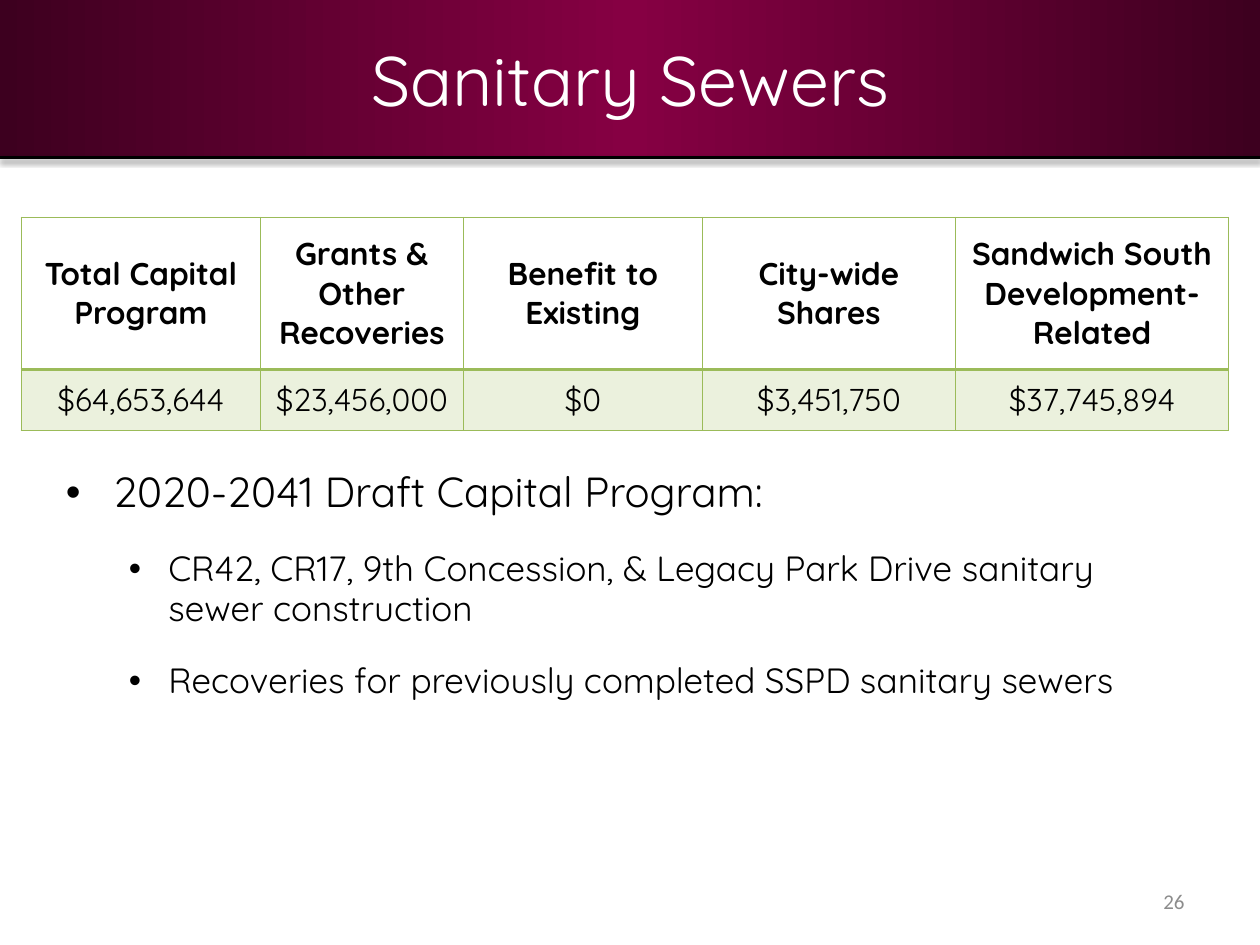
from lxml import etree
from pptx import Presentation
from pptx import util as u
from pptx.dml.color import RGBColor
from pptx.enum import shapes, text
from pptx.oxml import parse_xml
from pptx.oxml.ns import nsdecls, qn

Pt = u.Pt
COLORS = {"edge": "3D001F", "centre": "860043", "black": "000000",
          "white": "FFFFFF", "green": "9BBB59", "grey": "8C8C8C"}
CENTER, RIGHT, LEFT = (text.PP_ALIGN.CENTER, text.PP_ALIGN.RIGHT,
                       text.PP_ALIGN.LEFT)
MIDDLE = text.MSO_ANCHOR.MIDDLE
BANNER_HEIGHT = 90


def rgb(name):
    return RGBColor.from_string(COLORS[name])


def fill_xml(name, alpha=100):
    return (f'<a:solidFill {nsdecls("a")}><a:srgbClr val="{COLORS[name]}">'
            f'<a:alpha val="{alpha * 1000}"/></a:srgbClr></a:solidFill>')


class SlideBuilder:
    def __init__(self, deck, layout, font="Quicksand"):
        self.font = font
        self.page = deck.slides.add_slide(deck.slide_layouts[layout])

    def apply(self, target, values):
        for name, value in values.items():
            setattr(target, name, value)

    def place(self, shape, left, top, width, height):
        self.apply(shape, {"left": Pt(left), "top": Pt(top),
                           "width": Pt(width), "height": Pt(height)})

    def add_words(self, para, words, size, color="black", align=LEFT,
                  bold=False, font=None):
        para.alignment = align
        span = para.add_run()
        span.text = words
        self.apply(span.font, {"size": Pt(size), "bold": bold,
                               "name": font or self.font})
        span.font.color.rgb = rgb(color)

    def banner(self, left, top, width, height):
        box = self.page.shapes.add_shape(
            shapes.MSO_SHAPE.RECTANGLE, Pt(left), Pt(top), Pt(width), Pt(height))
        box.shadow.inherit = False
        box.line.fill.background()
        box.fill.gradient()
        box.fill.gradient_angle = 0
        stops = box._element.spPr.find(qn("a:gradFill")).find(qn("a:gsLst"))
        for stop in list(stops):
            stops.remove(stop)
        for position, name in ((0, "edge"), (50, "centre"), (100, "edge")):
            stops.append(parse_xml(
                f'<a:gs {nsdecls("a")} pos="{position * 1000}">'
                f'<a:srgbClr val="{COLORS[name]}"/></a:gs>'))
        # Behind the placeholders
        self.page.shapes._spTree.insert(2, box._element)

    def rule(self, left, right, top):
        line = self.page.shapes.add_connector(
            shapes.MSO_CONNECTOR.STRAIGHT, Pt(left), Pt(top), Pt(right), Pt(top))
        line.line.width = Pt(2)
        line.line.color.rgb = rgb("black")
        line._element.spPr.append(parse_xml(
            f'<a:effectLst {nsdecls("a")}><a:outerShdw blurRad="{Pt(3.1)}" '
            f'dist="{Pt(1.6)}" dir="5400000" rotWithShape="0">'
            f'<a:srgbClr val="{COLORS["black"]}"><a:alpha val="38000"/>'
            '</a:srgbClr></a:outerShdw></a:effectLst>'))

    def title(self, words, *frame):
        box = self.page.shapes.title
        self.place(box, *frame)
        self.apply(box.text_frame, {"vertical_anchor": MIDDLE,
                                    "auto_size": text.MSO_AUTO_SIZE.NONE})
        self.add_words(box.text_frame.paragraphs[0], words, 40, "white", CENTER)

    def bullets(self, items, *frame):
        box = self.page.placeholders[1]
        self.place(box, *frame)
        box.text_frame.auto_size = text.MSO_AUTO_SIZE.NONE
        styles = {0: (24, 27, 27), 1: (20, 58.5, 22.5)}
        for index, (level, words) in enumerate(items):
            para = (box.text_frame.add_paragraph() if index
                    else box.text_frame.paragraphs[0])
            size, margin, hanging = styles[level]
            self.apply(para, {"level": level, "space_after": Pt(12),
                              "space_before": Pt(6 if index else 0),
                              "line_spacing": 0.96})
            properties = para._p.get_or_add_pPr()
            properties.set("marL", str(Pt(margin)))
            properties.set("indent", str(-Pt(hanging)))
            etree.SubElement(properties, qn("a:buFont")).set("typeface", "Arial")
            etree.SubElement(properties, qn("a:buChar")).set("char", "•")
            self.add_words(para, words, size)

    def cell(self, cell, words, header):
        cell.vertical_anchor = MIDDLE
        if not header:
            self.apply(cell, dict.fromkeys(
                ("margin_left", "margin_right", "margin_top", "margin_bottom"), 0))
        self.add_words(cell.text_frame.paragraphs[0], words, 18,
                       align=CENTER, bold=header)
        properties = cell._tc.get_or_add_tcPr()
        # The rule between the two rows is heavier
        heavy = "lnB" if header else "lnT"
        for side in ("lnL", "lnR", "lnT", "lnB"):
            width = Pt(2 if side == heavy else 1)
            properties.append(parse_xml(
                f'<a:{side} {nsdecls("a")} w="{width}">'
                f'{fill_xml("green")}</a:{side}>'))
        if header:
            cell.fill.background()
        else:
            properties.append(parse_xml(fill_xml("green", 20)))

    def table(self, rows, widths, heights, left, top):
        table = self.page.shapes.add_table(
            len(rows), len(widths), Pt(left), Pt(top),
            Pt(sum(widths)), Pt(sum(heights))).table
        self.apply(table, {"first_row": False, "horz_banding": False})
        for column, width in zip(table.columns, widths):
            column.width = Pt(width)
        for index, (row, height) in enumerate(zip(table.rows, heights)):
            row.height = Pt(height)
            for cell, words in zip(row.cells, rows[index]):
                self.cell(cell, words, header=index == 0)

    def page_number(self, words, *frame):
        box = self.page.shapes.add_textbox(*map(Pt, frame))
        self.apply(box.text_frame, {"word_wrap": True, "vertical_anchor": MIDDLE})
        self.add_words(box.text_frame.paragraphs[0], words, 12, "grey", RIGHT,
                       font="Calibri")


def main():
    deck = Presentation()
    deck.slide_width, deck.slide_height = Pt(720), Pt(540)
    slide = SlideBuilder(deck, layout=1)

    # Heading
    slide.banner(0, 0, 720, BANNER_HEIGHT)
    slide.title("Sanitary Sewers", 0, 0, 720, BANNER_HEIGHT)
    slide.rule(0, 720, BANNER_HEIGHT)

    # Funding shares
    slide.table(
        [["Total Capital Program", "Grants & Other Recoveries",
          "Benefit to Existing", "City-wide Shares",
          "Sandwich South Development-Related"],
         ["$64,653,644", "$23,456,000", "$0", "$3,451,750", "$37,745,894"]],
        widths=[136.6, 116, 136.6, 144.6, 156.2], heights=[86.5, 35.2],
        left=12.2, top=124.4)

    # Capital program
    slide.bullets(
        [(0, "2020-2041 Draft Capital Program:"),
         (1, "CR42, CR17, 9th Concession, & Legacy Park Drive sanitary "
             "sewer construction"),
         (1, "Recoveries for previously completed SSPD sanitary sewers")],
        30.5, 264.5, 653.5, 234)

    # Footer
    slide.page_number("26", 516, 500.5, 168, 28.75)
    deck.save("out.pptx")


if __name__ == "__main__":
    main()
